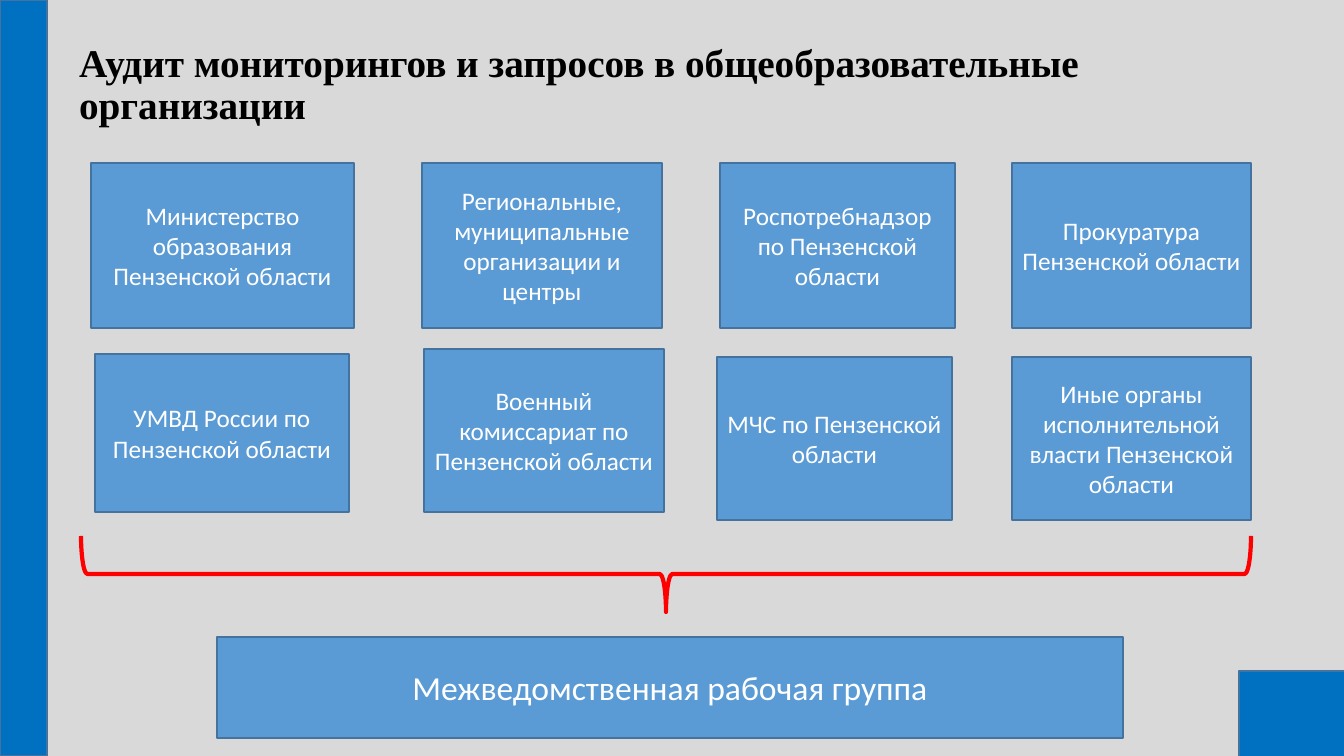
"""Build the slide on auditing monitoring and requests sent to schools."""
from pptx import Presentation
from pptx.dml.color import RGBColor
from pptx.enum.shapes import MSO_SHAPE
from pptx.enum.text import MSO_ANCHOR, MSO_AUTO_SIZE, PP_ALIGN
from pptx.util import Pt

RECTANGLE, BRACE = MSO_SHAPE.RECTANGLE, MSO_SHAPE.RIGHT_BRACE
MIDDLE, NO_FIT = MSO_ANCHOR.MIDDLE, MSO_AUTO_SIZE.NONE
LEFT, CENTER = PP_ALIGN.LEFT, PP_ALIGN.CENTER

GREY = RGBColor(0xD9, 0xD9, 0xD9)
ACCENT = RGBColor(0x00, 0x70, 0xC0)
BOX_BLUE = RGBColor(0x5B, 0x9B, 0xD5)
EDGE_BLUE = RGBColor(0x43, 0x73, 0x9E)
RED = RGBColor(0xFF, 0x00, 0x00)
BLACK = RGBColor(0x00, 0x00, 0x00)
WHITE = RGBColor(0xFF, 0xFF, 0xFF)

HEADING = "Аудит мониторингов и запросов в общеобразовательные организации"
HEADING_AREA = (69, 9, 1091, 154)
DECORATIONS = [(1239, 671, 115, 102), (0, 0, 47, 756)]
AGENCIES = [
    ("Министерство образования Пензенской области", (91, 163, 263, 165)),
    ("Региональные, муниципальные организации и центры", (422, 163, 240, 165)),
    ("Роспотребнадзор по Пензенской области", (720, 163, 235, 165)),
    ("Прокуратура Пензенской области", (1012, 163, 239, 165)),
    ("УМВД России по Пензенской области", (95, 354, 254, 158)),
    ("Военный комиссариат по Пензенской области", (424, 349, 240, 163)),
    ("МЧС по Пензенской области", (717, 357, 235, 163)),
    ("Иные органы исполнительной власти Пензенской области", (1012, 357, 239, 163)),
]
WORKING_GROUP = ("Межведомственная рабочая группа", (217, 637, 906, 101))
BRACE_AREA = (81, 536, 1170, 76)

SLIDE_WIDTH, SLIDE_HEIGHT = 1344, 756
EMU_PER_PX = 914400 / 100.8


def px(length):
    """Convert pixels to EMU."""
    return round(length * EMU_PER_PX)


def write(shape, text, align, size, font_name, color, bold=False):
    """Set one formatted paragraph in a shape."""
    frame = shape.text_frame
    frame.word_wrap = True
    frame.auto_size = NO_FIT
    frame.vertical_anchor = MIDDLE
    frame.text = text
    paragraph = frame.paragraphs[0]
    paragraph.alignment = align
    font = paragraph.runs[0].font
    font.size = Pt(size)
    font.name = font_name
    font.bold = bold
    font.color.rgb = color
    return paragraph


def add_outlined(slide, kind, area, line_color, line_width):
    """Add a shadowless shape with a coloured outline."""
    shape = slide.shapes.add_shape(kind, *map(px, area))
    shape.shadow.inherit = False
    shape.line.color.rgb = line_color
    shape.line.width = Pt(line_width)
    return shape


def add_box(slide, area, fill_color):
    """Add a filled rectangle."""
    box = add_outlined(slide, RECTANGLE, area, EDGE_BLUE, 1)
    box.fill.solid()
    box.fill.fore_color.rgb = fill_color
    return box


def add_brace(slide):
    """Add the brace that points down from the agencies to the group."""
    left, top, span, depth = BRACE_AREA
    offset = (span - depth) / 2
    upright = (left + offset, top - offset, depth, span)
    brace = add_outlined(slide, BRACE, upright, RED, 3)
    brace.fill.background()
    brace.rotation = 90


def main():
    """Assemble and save the slide."""
    deck = Presentation()
    deck.slide_width, deck.slide_height = px(SLIDE_WIDTH), px(SLIDE_HEIGHT)
    slide = deck.slides.add_slide(deck.slide_layouts[5])
    slide.background.fill.solid()
    slide.background.fill.fore_color.rgb = GREY

    for area in DECORATIONS:
        add_box(slide, area, ACCENT)

    title = slide.shapes.title
    title.left, title.top, title.width, title.height = map(px, HEADING_AREA)
    heading = write(title, HEADING, LEFT, 28, "Times New Roman", BLACK, bold=True)
    heading.line_spacing = 0.9

    for agency, area in AGENCIES:
        write(add_box(slide, area, BOX_BLUE), agency, CENTER, 18, "Calibri", WHITE)

    group, area = WORKING_GROUP
    write(add_box(slide, area, BOX_BLUE), group, CENTER, 24, "Calibri", WHITE)
    add_brace(slide)
    deck.save("out.pptx")


if __name__ == "__main__":
    main()
